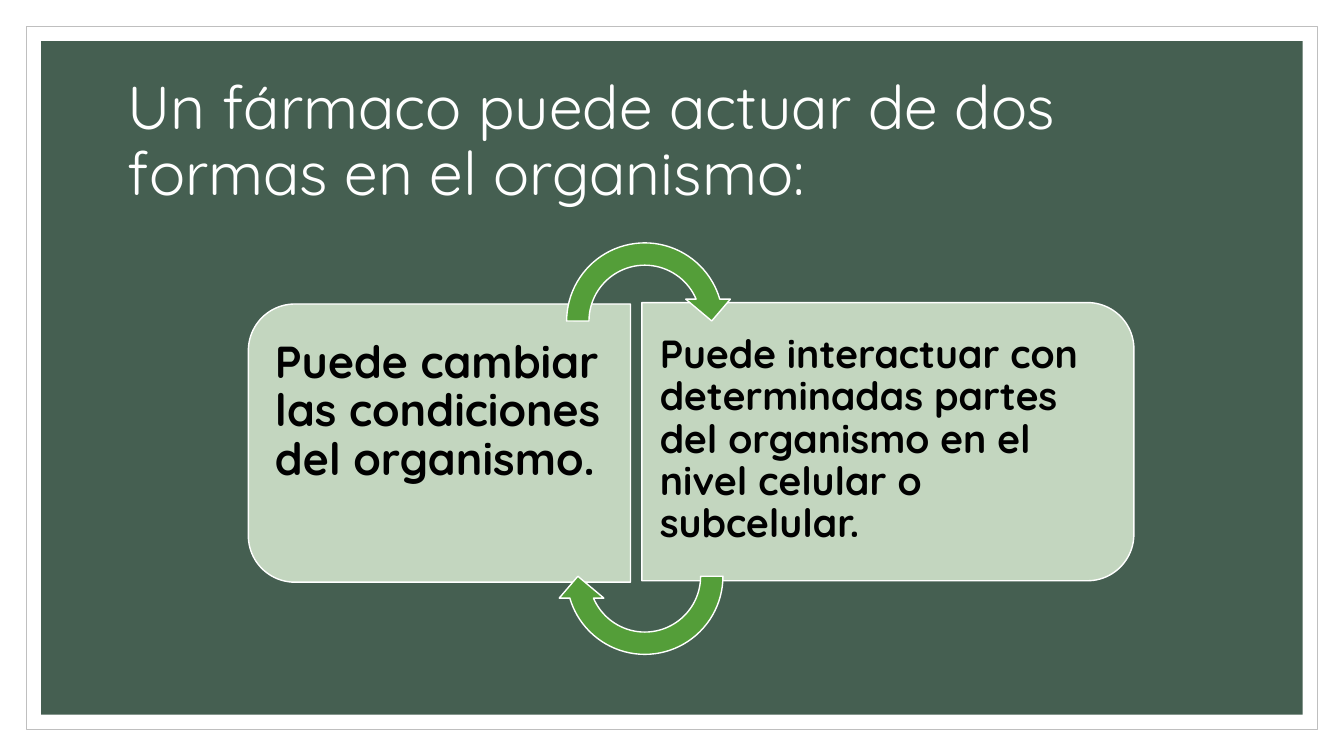
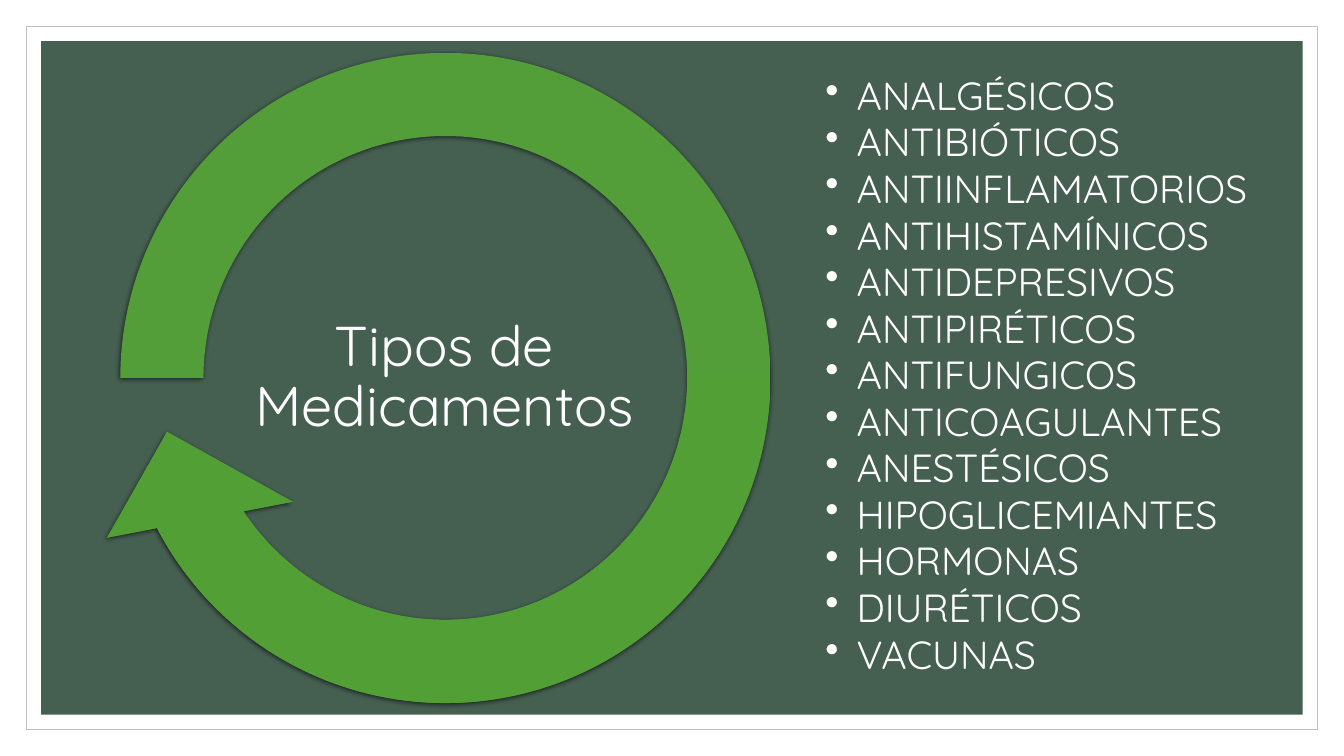
"""Build two slides on how drugs act and which types of medicine exist."""
from lxml.etree import SubElement
from pptx import Presentation
from pptx.dml.color import RGBColor
from pptx.enum.shapes import MSO_SHAPE as Preset
from pptx.enum.text import MSO_ANCHOR as Anchor, PP_ALIGN as Align
from pptx.oxml.ns import qn
from pptx.util import Cm, Pt

WHITE = RGBColor(0xFF, 0xFF, 0xFF)
BLACK = RGBColor(0, 0, 0)
GREY = RGBColor(0xBF, 0xBF, 0xBF)
BOARD = RGBColor(0x45, 0x5F, 0x51)
CARD = RGBColor(0xC3, 0xD6, 0xBF)
LEAF = RGBColor(0x54, 0x9E, 0x39)
LEAF_END = RGBColor(0x52, 0x9F, 0x36)
FONT = "Quicksand"
WIDTH, HEIGHT = 33.87, 19.05
FRAMES = [(0.66, WHITE, GREY, 0.5), (1.04, BOARD, None, 0)]

TITLE = "Un fármaco puede actuar de dos formas en el organismo:"
CARDS = [
    {"text": "Puede cambiar las condiciones del organismo.",
     "shape": (7.57, 6.35, 7.01, 9.63), "rotation": 270, "size": 32,
     "area": (6.6, 8, 9.3, 6.32), "insets": (0.33, 0.56, 0.51, 0.56)},
    {"text": "Puede interactuar con determinadas partes del organismo "
             "en el nivel celular o subcelular.",
     "shape": (18.87, 4.93, 7.01, 12.4), "rotation": 90, "size": 28,
     "area": (16.2, 7.95, 12.04, 6.32), "insets": (0.43, 0.48, 0.3, 0.48)},
]
CYCLE_ARROWS = [(5.84, 0), (12.27, 180)]
CYCLE_ADJUST = (0.125, 11.423, 204.577, 108, 0.125)
RING_ADJUST = (0.11, 11.423, 90, 108, 0.125)
RING_TITLE = "Tipos de Medicamentos"
MEDICINES = [
    "ANALGÉSICOS", "ANTIBIÓTICOS", "ANTIINFLAMATORIOS", "ANTIHISTAMÍNICOS",
    "ANTIDEPRESIVOS", "ANTIPIRÉTICOS", "ANTIFUNGICOS", "ANTICOAGULANTES",
    "ANESTÉSICOS", "HIPOGLICEMIANTES", "HORMONAS", "DIURÉTICOS", "VACUNAS",
]


def set_all(target, formats):
    for name, value in formats.items():
        setattr(target, name, value)


def add_preset(page, preset, area, fill, line=None, weight=1, rotation=0, adjust=()):
    shape = page.shapes.add_shape(preset, *map(Cm, area))
    shape.shadow.inherit = False
    shape.rotation = rotation
    shape.fill.solid()
    shape.fill.fore_color.rgb = fill
    if line is None:
        shape.line.fill.background()
    else:
        shape.line.color.rgb = line
        shape.line.width = Pt(weight)
    for index, value in enumerate(adjust):
        shape.adjustments[index] = value
    return shape


def add_text(page, area, lines, size, color=WHITE, bold=False, align=Align.LEFT,
             anchor=Anchor.MIDDLE, insets=(0.25, 0.13, 0.25, 0.13), after=0):
    frame = page.shapes.add_textbox(*map(Cm, area)).text_frame
    sides = ("margin_left", "margin_top", "margin_right", "margin_bottom")
    set_all(frame, dict(zip(sides, map(Cm, insets))))
    set_all(frame, {"word_wrap": True, "vertical_anchor": anchor})
    for index, line in enumerate(lines):
        para = frame.add_paragraph() if index else frame.paragraphs[0]
        set_all(para, {"alignment": align, "line_spacing": 0.9, "space_after": Pt(after)})
        span = para.add_run()
        span.text = line
        set_all(span.font, {"name": FONT, "size": Pt(size), "bold": bold})
        span.font.color.rgb = color
    return frame


def add_bullets(frame, indent):
    for para in frame.paragraphs:
        properties = para._p.get_or_add_pPr()
        properties.set("marL", str(Cm(indent)))
        properties.set("indent", str(-Cm(indent)))
        SubElement(properties, qn("a:buChar"), char="•")


def add_shadow(shape):
    effects = shape._element.spPr.find(qn("a:effectLst"))
    shadow = SubElement(effects, qn("a:outerShdw"), blurRad=str(Pt(3)),
                        dist=str(Pt(1)), dir="5400000", rotWithShape="0")
    color = SubElement(shadow, qn("a:srgbClr"), val=str(BLACK))
    SubElement(color, qn("a:alpha"), val="63000")


def add_page(deck):
    page = deck.slides.add_slide(deck.slide_layouts[6])
    for margin, fill, line, weight in FRAMES:
        area = (margin, margin, WIDTH - 2 * margin, HEIGHT - 2 * margin)
        add_preset(page, Preset.RECTANGLE, area, fill, line, weight)
    return page


def build_actions(deck):
    page = add_page(deck)
    add_text(page, (2.97, 1.7, 27.94, 3.81), [TITLE], 43.2)
    for card in CARDS:
        add_preset(page, Preset.ROUND_2_SAME_RECTANGLE, card["shape"], CARD, WHITE,
                   rotation=card["rotation"], adjust=(0.167, 0))
        add_text(page, card["area"], [card["text"]], card["size"], BLACK, True,
                 anchor=Anchor.TOP, insets=card["insets"])
    for top, rotation in CYCLE_ARROWS:
        add_preset(page, Preset.CIRCULAR_ARROW, (14, top, 4.5, 4.5), LEAF, WHITE,
                   rotation=rotation, adjust=CYCLE_ADJUST)


def build_types(deck):
    page = add_page(deck)
    ring = add_preset(page, Preset.CIRCULAR_ARROW, (1.7, 0, HEIGHT, HEIGHT), LEAF,
                      adjust=RING_ADJUST)
    ring.fill.gradient()
    ring.fill.gradient_angle = 270
    for stop, color in zip(ring.fill.gradient_stops, (LEAF, LEAF_END)):
        stop.color.rgb = color
    add_shadow(ring)
    medicines = add_text(page, (20.75, 1.37, 11.43, 16.26), MEDICINES, 28,
                         insets=(0.05,) * 4, after=3)
    add_bullets(medicines, 0.79)
    add_text(page, (5.89, 6.88, 10.62, 5.31), [RING_TITLE], 40, align=Align.CENTER,
             insets=(0.08,) * 4)


def main():
    deck = Presentation()
    set_all(deck, {"slide_width": Cm(WIDTH), "slide_height": Cm(HEIGHT)})
    build_actions(deck)
    build_types(deck)
    deck.save("out.pptx")


if __name__ == "__main__":
    main()
